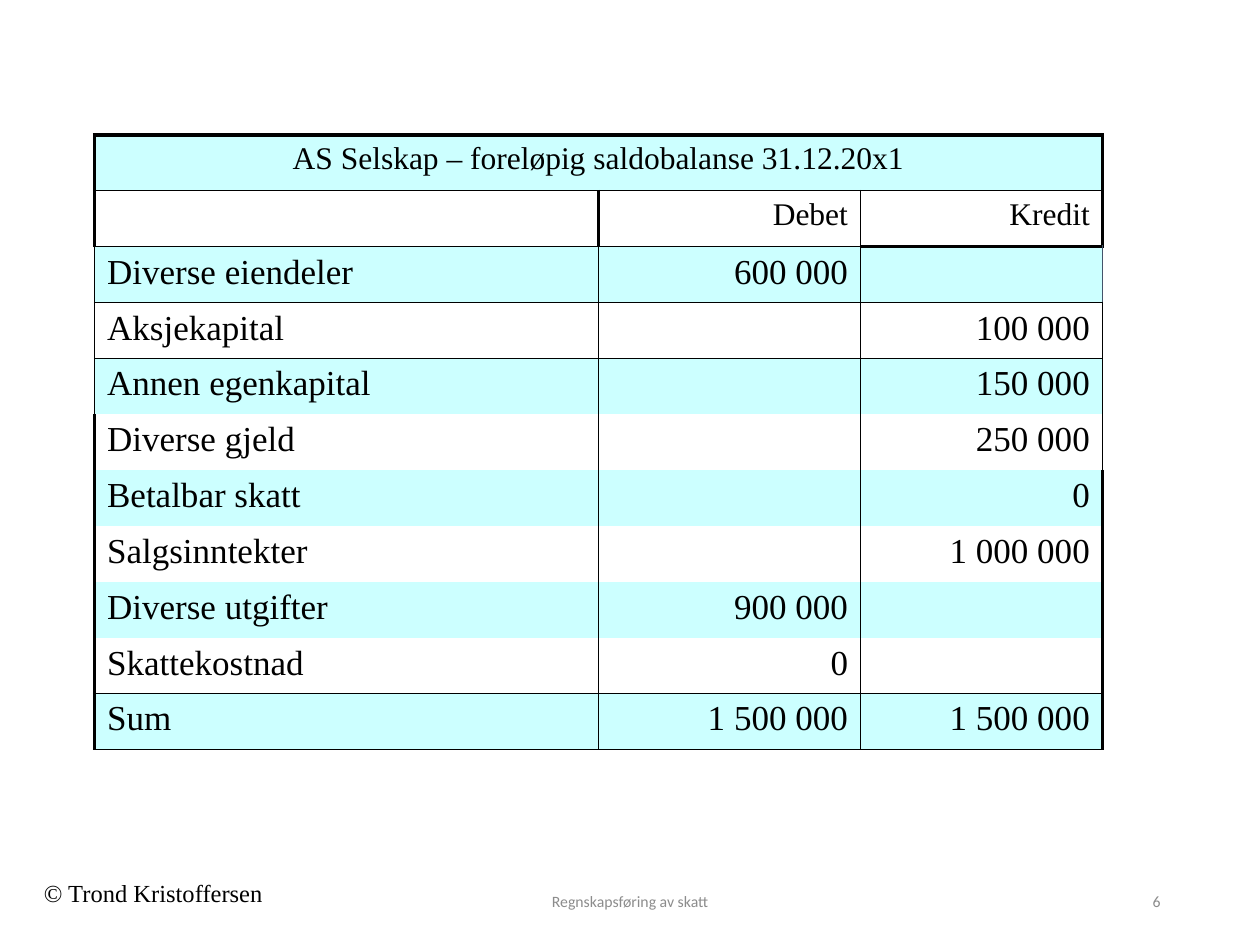
from lxml import etree
from pptx import Presentation
from pptx.dml.color import RGBColor
from pptx.enum.text import MSO_ANCHOR, PP_ALIGN
from pptx.oxml.ns import qn
from pptx.util import Inches, Pt

BLACK = RGBColor(0x00, 0x00, 0x00)
GREY = RGBColor(0x8C, 0x8C, 0x8C)
SLATE = RGBColor(0x44, 0x54, 0x6A)
AQUA = RGBColor(0xCC, 0xFF, 0xFF)
SERIF, SANS = "Times New Roman", "Calibri"

BALANCE = [
    ("AS Selskap – foreløpig saldobalanse 31.12.20x1", "", ""),
    ("", "Debet", "Kredit"),
    ("Diverse eiendeler", "600 000", ""),
    ("Aksjekapital", "", "100 000"),
    ("Annen egenkapital", "", "150 000"),
    ("Diverse gjeld", "", "250 000"),
    ("Betalbar skatt", "", "0"),
    ("Salgsinntekter", "", "1 000 000"),
    ("Diverse utgifter", "900 000", ""),
    ("Skattekostnad", "0", ""),
    ("Sum", "1 500 000", "1 500 000"),
]
COLUMN_WIDTHS = [4, 2.08, 1.92]
TABLE_LEFT, TABLE_TOP, TABLE_HEIGHT = 0.75, 1.07, 4.88
HEADER_ROWS = 2

# text, (left, top, width, height), font, size, colour, alignment, anchor
FOOTERS = [
    ("© Trond Kristoffersen", (0.25, 6.92, 2.08, 0.33), SERIF, 14, BLACK,
     PP_ALIGN.LEFT, MSO_ANCHOR.TOP),
    ("Regnskapsføring av skatt", (3.31, 6.95, 3.38, 0.4), SANS, 9, GREY,
     PP_ALIGN.CENTER, MSO_ANCHOR.MIDDLE),
    ("6", (7.06, 6.95, 2.25, 0.4), SANS, 9, GREY,
     PP_ALIGN.RIGHT, MSO_ANCHOR.MIDDLE),
]

THIN, THICK = 1, 2.25
RULED_LINES = {1, 2, 3, 4, 10, 11}
THICK_LEFT_ROWS = {0, 1, 5, 6, 7, 8, 9, 10}
THICK_RIGHT_ROWS = THICK_LEFT_ROWS - {5}


def horizontal_width(line, column):
    """Width of the rule above row number `line`; 0 means no rule."""
    if line == 0 or (line, column) == (HEADER_ROWS, 2):
        return THICK
    return THIN if line in RULED_LINES else 0


def vertical_width(row, line):
    """Width of the rule left of column number `line`."""
    if row == 0 or (row, line) == (1, 1):
        return THICK
    thick_rows = {0: THICK_LEFT_ROWS, 3: THICK_RIGHT_ROWS}.get(line, set())
    return THICK if row in thick_rows else THIN


def add_border(cell, side, width, color):
    properties = cell._tc.get_or_add_tcPr()
    line = etree.SubElement(properties, qn("a:ln" + side), w=str(Pt(width)))
    if width:
        fill = etree.SubElement(line, qn("a:solidFill"))
        etree.SubElement(fill, qn("a:srgbClr"), val=str(color))
    else:
        etree.SubElement(line, qn("a:noFill"))


def write(text_frame, text, font_name, size, color, alignment):
    text_frame.text = text
    paragraph = text_frame.paragraphs[0]
    paragraph.alignment = alignment
    font = paragraph.runs[0].font if paragraph.runs else paragraph.font
    font.name, font.size = font_name, Pt(size)
    font.color.rgb = color


def add_footer(slide, text, box, font_name, size, color, alignment, anchor):
    text_frame = slide.shapes.add_textbox(*map(Inches, box)).text_frame
    text_frame.word_wrap = True
    text_frame.vertical_anchor = anchor
    write(text_frame, text, font_name, size, color, alignment)


def format_cell(cell, row, column, text):
    if row == 0:
        alignment = PP_ALIGN.CENTER
    else:
        alignment = PP_ALIGN.RIGHT if column else PP_ALIGN.LEFT
    size = 18 if row < HEADER_ROWS or not text else 20
    write(cell.text_frame, text, SERIF, size, BLACK, alignment)

    right_color = SLATE if (row, column) == (2, 2) else BLACK
    add_border(cell, "L", vertical_width(row, column), BLACK)
    add_border(cell, "R", vertical_width(row, column + 1), right_color)
    add_border(cell, "T", horizontal_width(row, column), BLACK)
    add_border(cell, "B", horizontal_width(row + 1, column), BLACK)
    if row % 2 == 0:
        cell.fill.solid()
        cell.fill.fore_color.rgb = AQUA
    else:
        cell.fill.background()


def add_balance(slide):
    table = slide.shapes.add_table(
        len(BALANCE), len(COLUMN_WIDTHS), Inches(TABLE_LEFT), Inches(TABLE_TOP),
        Inches(sum(COLUMN_WIDTHS)), Inches(TABLE_HEIGHT)).table
    table.first_row = table.horz_banding = False
    for column, width in zip(table.columns, COLUMN_WIDTHS):
        column.width = Inches(width)
    for row, texts in enumerate(BALANCE):
        table.rows[row].height = Inches(TABLE_HEIGHT / len(BALANCE))
        for column, text in enumerate(texts):
            format_cell(table.cell(row, column), row, column, text)
    table.cell(0, 0).merge(table.cell(0, 2))


def main():
    presentation = Presentation()
    presentation.slide_width, presentation.slide_height = Inches(10), Inches(7.5)
    slide = presentation.slides.add_slide(presentation.slide_layouts[6])
    for footer in FOOTERS:
        add_footer(slide, *footer)
    add_balance(slide)
    presentation.save("out.pptx")


if __name__ == "__main__":
    main()
